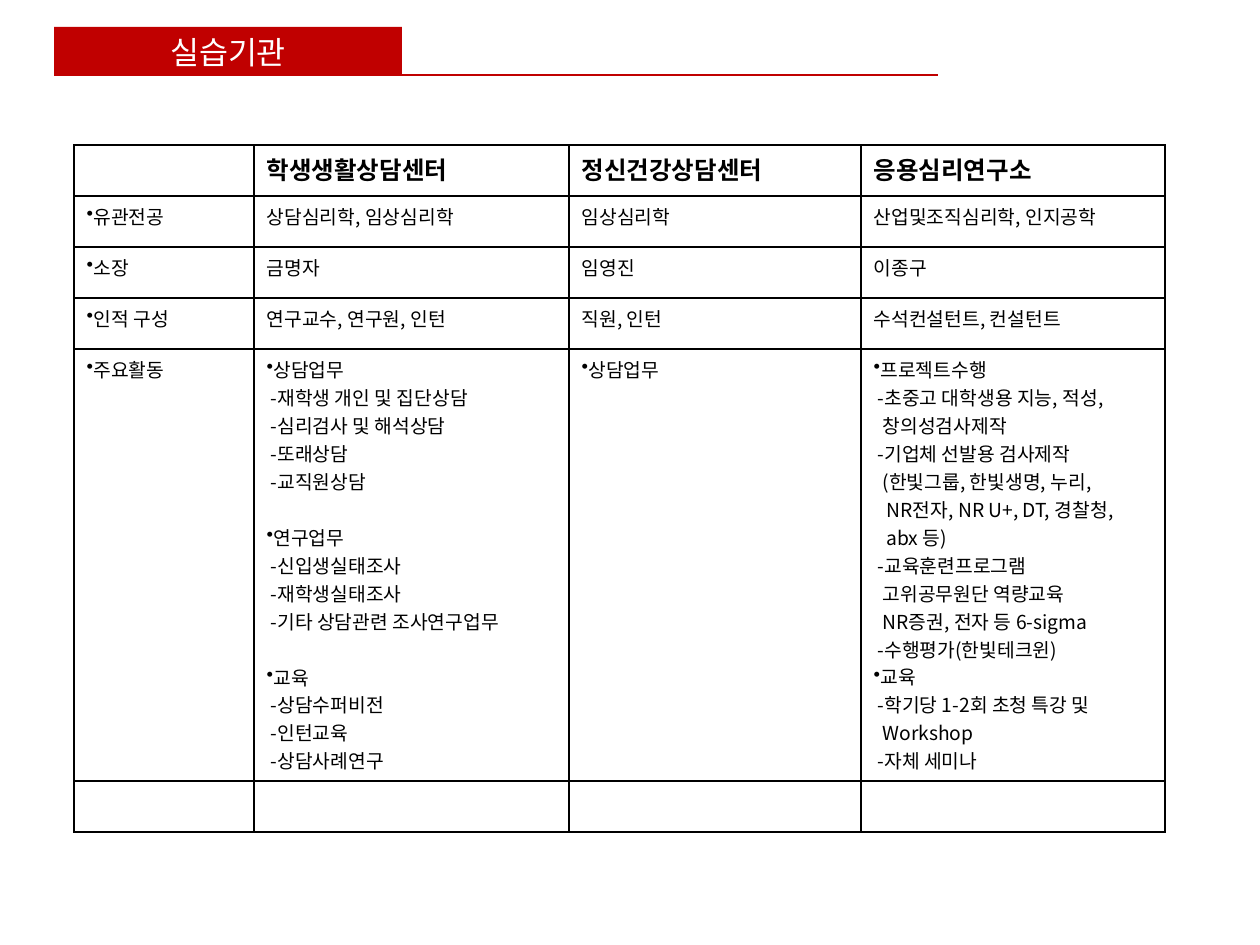
from lxml.etree import SubElement as Sub
from pptx import Presentation
from pptx.dml.color import RGBColor as RGB
from pptx.enum.shapes import MSO_CONNECTOR as Conn, MSO_SHAPE as Shape
from pptx.enum.text import MSO_ANCHOR as Anchor, PP_ALIGN as Align
from pptx.oxml.ns import qn
from pptx.util import Pt

EMU = 914400 / 126
THEME = {
    "font": "Noto Sans CJK KR",
    "red": RGB(0xC0, 0, 0), "white": RGB(255, 255, 255), "black": RGB(0, 0, 0),
    "title": Pt(18), "head": Pt(14), "body": Pt(11),
    "rule": Pt(0.75), "edge": Pt(1), "gap": Pt(16),
}
COLS = [180, 315, 292, 304]
ROWS = [51, 51, 51, 51, 432, 51]
STEPS = [0, 4, 9, 13]  # left indent of each level

HEAD = ["", "학생생활상담센터", "정신건강상담센터", "응용심리연구소"]
FACTS = [
    ["•유관전공", "상담심리학, 임상심리학", "임상심리학", "산업및조직심리학, 인지공학"],
    ["•소장", "금명자", "임영진", "이종구"],
    ["•인적 구성", "연구교수, 연구원, 인턴", "직원, 인턴", "수석컨설턴트, 컨설턴트"],
]
# Each line of a list is (level, text).
STUDENT = [
    (0, "•상담업무"), (1, "-재학생 개인 및 집단상담"), (1, "-심리검사 및 해석상담"),
    (1, "-또래상담"), (1, "-교직원상담"),
    (0, "•연구업무"), (1, "-신입생실태조사"), (1, "-재학생실태조사"),
    (1, "-기타 상담관련 조사연구업무"),
    (0, "•교육"), (1, "-상담수퍼비전"), (1, "-인턴교육"), (1, "-상담사례연구"),
]
APPLIED = [
    (0, "•프로젝트수행"), (1, "-초중고 대학생용 지능, 적성,"), (2, "창의성검사제작"),
    (1, "-기업체 선발용 검사제작"), (2, "(한빛그룹, 한빛생명, 누리,"),
    (3, "NR전자, NR U+, DT, 경찰청,"), (3, "abx 등)"),
    (1, "-교육훈련프로그램"), (2, "고위공무원단 역량교육"),
    (2, "NR증권, 전자 등 6-sigma"), (1, "-수행평가(한빛테크윈)"),
    (0, "•교육"), (1, "-학기당 1-2회 초청 특강 및"), (2, "Workshop"), (1, "-자체 세미나"),
]


def px(n):
    return round(n * EMU)


def write(para, text, size, color, bold=False):
    run = para.add_run()
    run.text = text
    form = {"name": THEME["font"], "size": size, "bold": bold}
    for key, val in form.items():
        setattr(run.font, key, val)
    run.font.color.rgb = color
    Sub(run.font._element, qn("a:ea"), typeface=THEME["font"])


def banner(slide, x, y, w, h, text, reach):
    """Title block with a rule that runs on to its right."""
    base = px(y + h - 1)
    line = slide.shapes.add_connector(Conn.STRAIGHT, px(x + 10), base, px(x + reach), base)
    line.line.color.rgb = THEME["red"]
    line.line.width = THEME["rule"]
    Sub(line._element.spPr, qn("a:effectLst"))

    box = slide.shapes.add_shape(Shape.RECTANGLE, px(x), px(y), px(w), px(h))
    box.shadow.inherit = False
    box.fill.solid()
    box.fill.fore_color.rgb = THEME["red"]
    box.line.fill.background()
    frame = box.text_frame
    frame.vertical_anchor = Anchor.MIDDLE
    para = frame.paragraphs[0]
    para.alignment = Align.CENTER
    write(para, text, THEME["title"], THEME["white"])


def border(cell):
    props = cell._tc.get_or_add_tcPr()
    for i, side in enumerate(("lnL", "lnR", "lnT", "lnB")):
        edge = Sub(props, qn("a:" + side), w=str(THEME["edge"]))
        fill = Sub(edge, qn("a:solidFill"))
        Sub(fill, qn("a:srgbClr"), val=str(THEME["black"]))
        props.insert(i, edge)


def fill_cell(cell, lines, size, bold, gap):
    """Write lines; gap is the space above each later bullet."""
    cell.fill.background()
    border(cell)
    frame = cell.text_frame
    for i, (level, text) in enumerate(lines):
        para = frame.add_paragraph() if i else frame.paragraphs[0]
        mark = text.startswith("•")
        if mark and i:
            para.space_before = gap
        props = para._p.get_or_add_pPr()
        props.set("marL", str(px(STEPS[level])))
        props.set("indent", "0")
        if mark:
            Sub(props, qn("a:buChar"), char="•")
        write(para, text.removeprefix("•"), size, THEME["black"], bold)


def grid(slide, x, y, rows):
    frame = slide.shapes.add_table(
        len(ROWS), len(COLS), px(x), px(y), px(sum(COLS)), px(sum(ROWS)))
    table = frame.table
    table.first_row = table.horz_banding = False
    for col, w in zip(table.columns, COLS):
        col.width = px(w)
    for r, (row, h) in enumerate(zip(table.rows, ROWS)):
        row.height = px(h)
        size = THEME["body" if r else "head"]
        for c, (cell, item) in enumerate(zip(row.cells, rows[r])):
            lines = [(0, item)] if isinstance(item, str) else item
            gap = THEME["gap"] if c == 1 else 0
            fill_cell(cell, lines, size, r == 0, gap)


def main():
    deck = Presentation()
    deck.slide_width, deck.slide_height = px(1260), px(945)
    slide = deck.slides.add_slide(deck.slide_layouts[6])
    banner(slide, 54, 27, 348, 49, "실습기관", 884)
    work = ["•주요활동", STUDENT, "•상담업무", APPLIED]
    grid(slide, 74, 145, [HEAD, *FACTS, work, [""] * len(COLS)])
    deck.save("out.pptx")


if __name__ == "__main__":
    main()
